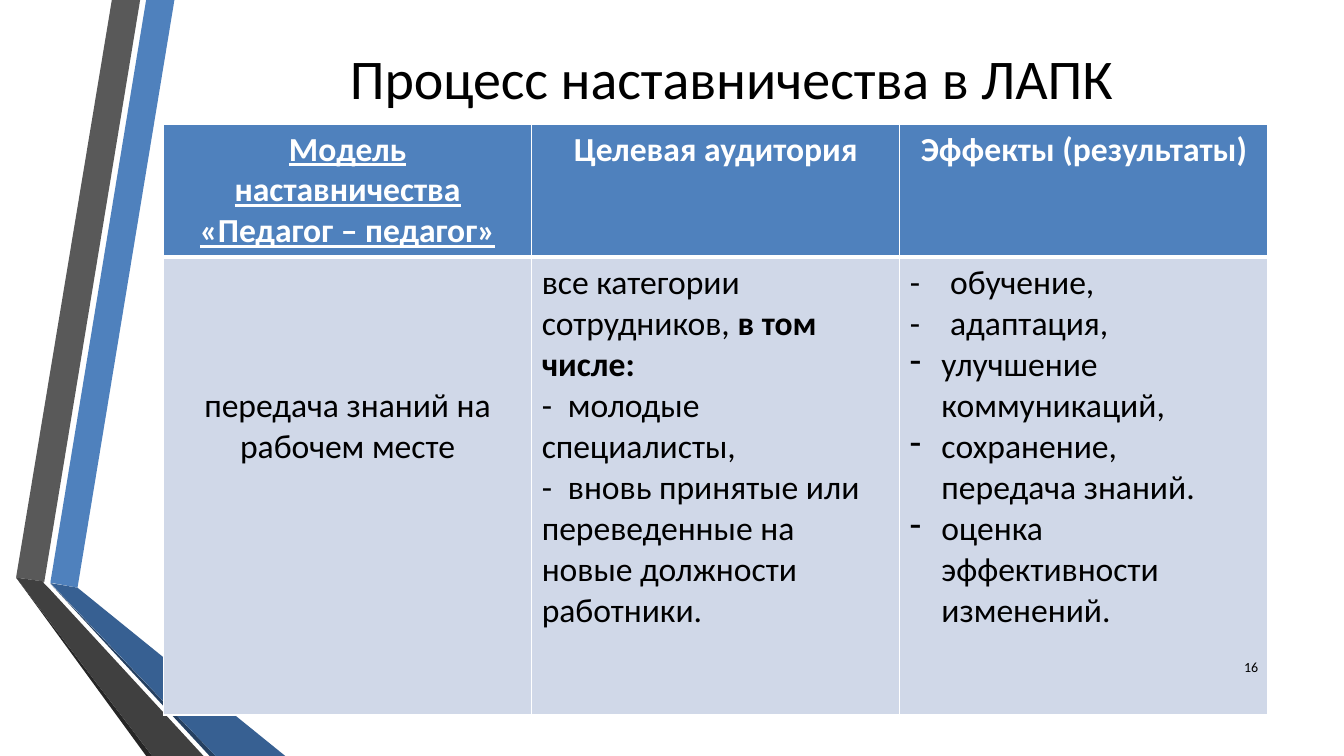
from lxml import etree
from pptx import Presentation
from pptx import util as u
from pptx.dml.color import RGBColor
from pptx.enum import text
from pptx.oxml.ns import qn

BLACK, WHITE = "000000", "FFFFFF"
HEADER_FILL, BODY_FILL = "4F81BD", "D0D8E8"
CENTER, RIGHT, LEFT = text.PP_ALIGN.CENTER, text.PP_ALIGN.RIGHT, text.PP_ALIGN.LEFT

# Fill and corner points of each ribbon piece, from back to front
RIBBONS = [
    ("4F81BD", [(36, 416.2), (55.4, 419.8), (124.6, 0), (104.4, 0)]),
    ("595959", [(100.1, 0), (79.9, 0), (11.5, 412.6), (31.7, 415.4)]),
    ("262626", [(11.5, 412.6), (104.4, 540), (108.7, 540)]),
    ("254061", [(36, 416.9), (149.8, 540), (154.1, 540)]),
    ("376092", [(36, 416.5), (154.1, 540), (203.8, 540), (55.4, 419.8)]),
    ("404040", [(145.4, 540), (34.6, 419.8), (31, 416.2), (31.7, 415.4),
                (11.5, 412.6), (108.7, 540)]),
]

HEADERS = ["Модель наставничества «Педагог – педагог»", "Целевая аудитория",
           "Эффекты (результаты)"]
# Each paragraph: its spans as (text, bold), then its paragraph format
BODY = [
    [([("передача знаний на рабочем месте", False)], {"align": CENTER})],
    [
        ([("все категории сотрудников, ", False), ("в том числе:", True)], {}),
        ([("-\tмолодые специалисты,", False)], {"tab": 18.7}),
        ([("-\tвновь принятые или переведенные на новые должности работники.",
           False)], {"tab": 18.7}),
    ],
    [
        ([("-\tобучение,", False)], {"tab": 28.7}),
        ([("-\tадаптация,", False)], {"tab": 28.7}),
        ([("улучшение коммуникаций,", False)], {"bullet": "-"}),
        ([("сохранение, передача знаний.", False)], {"bullet": "-"}),
        ([("оценка эффективности изменений.", False)], {"bullet": "-"}),
    ],
]


def colour(hex_code):
    return RGBColor.from_string(hex_code)


def points(*values):
    return [u.Pt(value) for value in values]


def add_span(para, words, size=24, bold=False, underline=False, ink=BLACK):
    span = para.add_run()
    span.text = words
    font = span.font
    font.name, font.size = Slide.FONT, u.Pt(size)
    font.bold, font.underline = bold, underline
    font.color.rgb = colour(ink)


def format_para(para, align=LEFT, tab=None, bullet=None, indent=22.5):
    """Align a paragraph and give it a tab stop or a hanging bullet."""
    para.alignment = align
    props = para._p.get_or_add_pPr()
    if bullet:
        props.set("marL", str(u.Pt(indent)))
        props.set("indent", str(-u.Pt(indent)))
        etree.SubElement(props, qn("a:buFontTx"))
        etree.SubElement(props, qn("a:buChar"), char=bullet)
    if tab:
        stops = etree.SubElement(props, qn("a:tabLst"))
        etree.SubElement(stops, qn("a:tab"), pos=str(u.Pt(tab)), algn="l")


def add_borders(cell, **widths):
    props = cell._tc.get_or_add_tcPr()
    for side in "LRTB":
        line = etree.SubElement(props, qn(f"a:ln{side}"), w=str(u.Pt(widths.get(side, 1))))
        fill = etree.SubElement(line, qn("a:solidFill"))
        etree.SubElement(fill, qn("a:srgbClr"), val=WHITE)


class Slide:
    FONT = "Calibri"

    def __init__(self, deck):
        self.page = deck.slides.add_slide(deck.slide_layouts[5])

    def ribbon(self, fill, corners):
        first, *rest = [points(*corner) for corner in corners]
        builder = self.page.shapes.build_freeform(*first, scale=1.0)
        builder.add_line_segments(rest, close=True)
        shape = builder.convert_to_shape()
        shape.shadow.inherit = False
        shape.fill.solid()
        shape.fill.fore_color.rgb = colour(fill)
        shape.line.fill.background()

    def title(self, words, place):
        box = self.page.shapes.title
        box.left, box.top, box.width, box.height = points(*place)
        self.line_of_text(box.text_frame, words, 40, CENTER)

    def label(self, words, place, size, align):
        box = self.page.shapes.add_textbox(*points(*place))
        self.line_of_text(box.text_frame, words, size, align)

    def line_of_text(self, frame, words, size, align):
        frame.word_wrap = True
        frame.auto_size = text.MSO_AUTO_SIZE.NONE
        frame.vertical_anchor = text.MSO_ANCHOR.MIDDLE
        format_para(frame.paragraphs[0], align)
        add_span(frame.paragraphs[0], words, size)

    def table(self, headers, body, place, row_heights):
        grid = self.page.shapes.add_table(2, len(headers), *points(*place)).table
        for row, height in zip(grid.rows, row_heights):
            row.height = u.Pt(height)
        for column, words in enumerate(headers):
            cell = grid.cell(0, column)
            self.paint(cell, HEADER_FILL, B=3)
            para = cell.text_frame.paragraphs[0]
            format_para(para, CENTER)
            add_span(para, words, bold=True, underline=column == 0, ink=WHITE)
        for column, paragraphs in enumerate(body):
            cell = grid.cell(1, column)
            self.paint(cell, BODY_FILL, T=3)
            frame = cell.text_frame
            for index, (spans, layout) in enumerate(paragraphs):
                para = frame.add_paragraph() if index else frame.paragraphs[0]
                format_para(para, **layout)
                for words, bold in spans:
                    add_span(para, words, bold=bold)
        # The mentoring goal starts three lines down its cell
        grid.cell(1, 0).margin_top = u.Pt(91.5)

    def paint(self, cell, fill, **borders):
        add_borders(cell, **borders)
        cell.fill.solid()
        cell.fill.fore_color.rgb = colour(fill)


def main():
    deck = Presentation()
    deck.slide_width, deck.slide_height = points(960, 540)
    slide = Slide(deck)
    for fill, corners in RIBBONS:
        slide.ribbon(fill, corners)
    slide.title("Процесс наставничества в ЛАПК", (128, 21.6, 789, 67))
    slide.table(HEADERS, BODY, (116.8, 88.6, 789, 418.4), (91.4, 327))
    slide.label("16", (862.6, 462.2, 43.2, 28.8), 10, RIGHT)
    deck.save("out.pptx")


if __name__ == "__main__":
    main()
